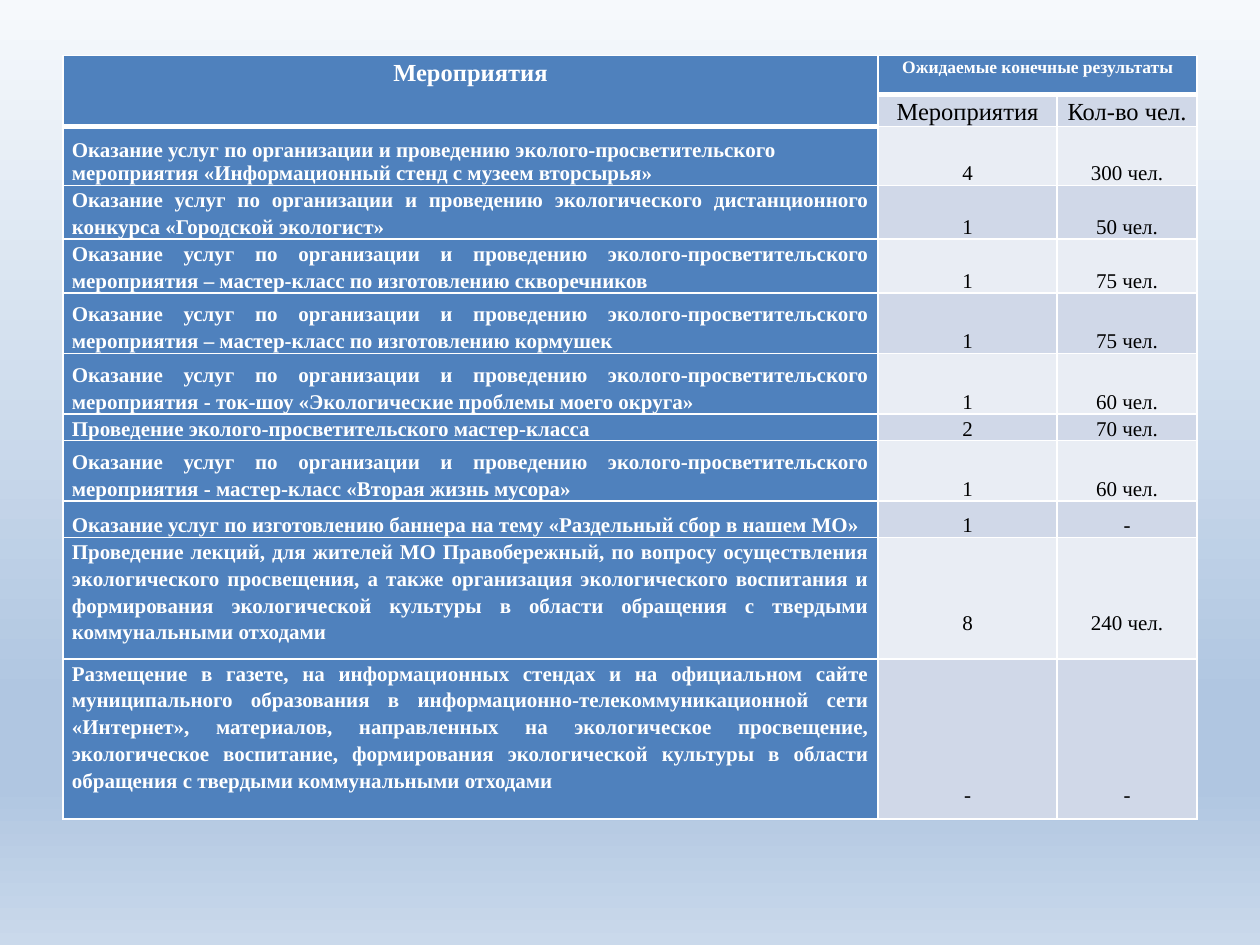
from lxml import etree
from pptx import Presentation
from pptx import util as u
from pptx.dml.color import RGBColor
from pptx.enum import text
from pptx.oxml import ns

# Content
HEADING = "Мероприятия"
RESULTS = "Ожидаемые конечные результаты"
SUBHEADS = ("Мероприятия", "Кол-во чел.")
SERVICE = "Оказание услуг по организации и проведению "
EVENT = SERVICE + "эколого-просветительского мероприятия "
# (activity, number of events, people, row height in cm)
ACTIVITIES = [
    (EVENT + "«Информационный стенд с музеем вторсырья»", "4", "300 чел.", 1.19),
    (SERVICE + "экологического дистанционного конкурса «Городской экологист»",
     "1", "50 чел.", 1.08),
    (EVENT + "– мастер-класс по изготовлению скворечников", "1", "75 чел.", 1.08),
    (EVENT + "– мастер-класс по изготовлению кормушек", "1", "75 чел.", 1.22),
    (EVENT + "- ток-шоу «Экологические проблемы моего округа»", "1", "60 чел.", 1.22),
    ("Проведение эколого-просветительского мастер-класса", "2", "70 чел.", 0.53),
    (EVENT + "- мастер-класс «Вторая жизнь мусора»", "1", "60 чел.", 1.22),
    ("Оказание услуг по изготовлению баннера на тему «Раздельный сбор в нашем МО»",
     "1", "-", 0.73),
    ("Проведение лекций, для жителей МО Правобережный, по вопросу осуществления "
     "экологического просвещения, а также организация экологического воспитания и "
     "формирования экологической культуры в области обращения с твердыми "
     "коммунальными отходами", "8", "240 чел.", 2.45),
    ("Размещение в газете, на информационных стендах и на официальном сайте "
     "муниципального образования в информационно-телекоммуникационной сети "
     "«Интернет», материалов, направленных на экологическое просвещение, "
     "экологическое воспитание, формирования экологической культуры в области "
     "обращения с твердыми коммунальными отходами", "-", "-", 3.23),
]
TOP_ALIGNED = {8: 0.48, 9: 0.24}  # long rows: gap under the figures, cm

THEME = {
    "font": "Times New Roman", "head": 14, "small": 10, "body": 12,
    "blue": "4F81BD", "bands": ("E9EDF4", "D0D8E8"),
    "white": "FFFFFF", "black": "000000",
    "backdrop": ((0, "F6F9FC"), (74, "B0C6E1"), (83, "B0C6E1"), (100, "CAD9EB")),
}
COLUMNS = (16.43, 3.61, 2.82)
HEAD_ROWS = (0.79, 0.64)
ALIGN, ANCHOR = text.PP_ALIGN, text.MSO_ANCHOR


def paint_backdrop(page):
    fill = page.background.fill
    fill.gradient()
    fill.gradient_angle = 270
    stops = page.element.find(".//" + ns.qn("a:gsLst"))
    for stop in list(stops):
        stops.remove(stop)
    for position, color in THEME["backdrop"]:
        stop = etree.SubElement(stops, ns.qn("a:gs"), pos=str(position * 1000))
        etree.SubElement(stop, ns.qn("a:srgbClr"), val=color)


def style_cell(cell, fill, bottom=1):
    """White borders, fill and side margins."""
    properties = cell._tc.get_or_add_tcPr()
    for side, width in (("L", 1), ("R", 1), ("T", 1), ("B", bottom)):
        line = etree.SubElement(properties, ns.qn("a:ln" + side), w=str(u.Pt(width)))
        solid = etree.SubElement(line, ns.qn("a:solidFill"))
        etree.SubElement(solid, ns.qn("a:srgbClr"), val=THEME["white"])
    cell.fill.solid()
    cell.fill.fore_color.rgb = RGBColor.from_string(fill)
    cell.margin_left = cell.margin_right = u.Cm(0.18)
    cell.margin_top = cell.margin_bottom = 0


def write(cell, words, size, color, bold, align=ALIGN.CENTER, spacing=1.15,
          after=10, anchor=ANCHOR.TOP):
    cell.text = words
    cell.vertical_anchor = anchor
    para = cell.text_frame.paragraphs[0]
    para.alignment, para.line_spacing = align, spacing
    para.space_after = u.Pt(after)
    font = para.font
    font.name, font.size, font.bold = THEME["font"], u.Pt(size), bold
    font.color.rgb = RGBColor.from_string(color)


def add_activities(page):
    heights = HEAD_ROWS + tuple(row[-1] for row in ACTIVITIES)
    table = page.shapes.add_table(
        len(heights), len(COLUMNS), u.Cm(1.27), u.Cm(1.12),
        u.Cm(sum(COLUMNS)), u.Cm(sum(heights))).table
    table.first_row = table.horz_banding = False
    for column, width in zip(table.columns, COLUMNS):
        column.width = u.Cm(width)
    for row, height in zip(table.rows, heights):
        row.height = u.Cm(height)

    # Heading rows
    white, black, blue = THEME["white"], THEME["black"], THEME["blue"]
    for place in ((0, 0), (1, 0), (0, 1), (0, 2)):
        style_cell(table.cell(*place), blue, bottom=3)
    table.cell(0, 0).merge(table.cell(1, 0))
    table.cell(0, 1).merge(table.cell(0, 2))
    write(table.cell(0, 0), HEADING, THEME["head"], white, True)
    write(table.cell(0, 1), RESULTS, THEME["small"], white, True)
    for column, words in enumerate(SUBHEADS, 1):
        style_cell(table.cell(1, column), THEME["bands"][1])
        write(table.cell(1, column), words, THEME["head"], black, False)

    # Activity rows
    for index, (activity, events, people, _) in enumerate(ACTIVITIES):
        row = index + len(HEAD_ROWS)
        name = table.cell(row, 0)
        style_cell(name, blue)
        layout = (ALIGN.JUSTIFY, 1.15, 10) if index else (ALIGN.LEFT, 1.0, 0)
        anchor = ANCHOR.TOP if index in TOP_ALIGNED else ANCHOR.BOTTOM
        write(name, activity, THEME["body"], white, True, *layout, anchor)
        for column, words in enumerate((events, people), 1):
            cell = table.cell(row, column)
            style_cell(cell, THEME["bands"][index % 2])
            write(cell, words, THEME["body"], black, False,
                  spacing=1.07, after=0, anchor=ANCHOR.BOTTOM)
            cell.margin_bottom = u.Cm(TOP_ALIGNED.get(index, 0))


def main():
    deck = Presentation()
    deck.slide_width, deck.slide_height = u.Cm(25.4), u.Cm(19.05)
    page = deck.slides.add_slide(deck.slide_layouts[6])
    paint_backdrop(page)
    add_activities(page)
    deck.save("out.pptx")


if __name__ == "__main__":
    main()
